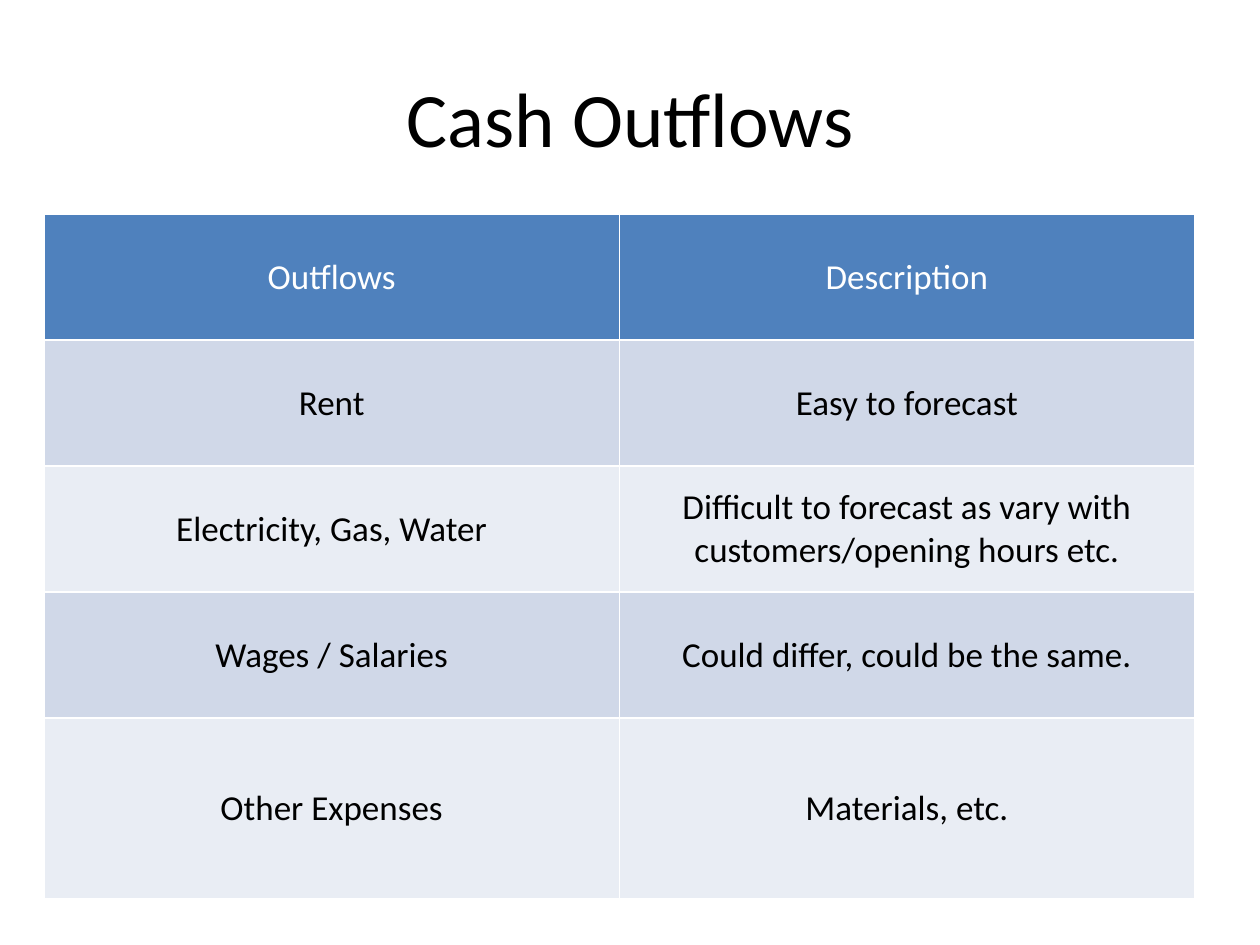
from lxml import etree
from pptx import Presentation
from pptx.dml.color import RGBColor
from pptx.enum.text import MSO_ANCHOR, PP_ALIGN
from pptx.oxml.ns import qn
from pptx.util import Inches, Pt

CENTER = PP_ALIGN.CENTER
MIDDLE = MSO_ANCHOR.MIDDLE
BLACK = RGBColor(0x00, 0x00, 0x00)
WHITE = RGBColor(0xFF, 0xFF, 0xFF)
HEADER_BLUE = RGBColor(0x4F, 0x81, 0xBD)
BANDS = (RGBColor(0xE9, 0xED, 0xF4), RGBColor(0xD0, 0xD8, 0xE8))
FONT = "Calibri"
TITLE_ONLY = 5

OUTFLOWS = (
    ("Outflows", "Description"),
    ("Rent", "Easy to forecast"),
    ("Electricity, Gas, Water",
     "Difficult to forecast as vary with customers/opening hours etc."),
    ("Wages / Salaries", "Could differ, could be the same."),
    ("Other Expenses", "Materials, etc."),
)
ROW_HEIGHTS = (1, 1, 1, 1, 1.43)


def format_text(text_frame, size, color):
    """Centre the text and set its font."""
    for paragraph in text_frame.paragraphs:
        paragraph.alignment = CENTER
        for run in paragraph.runs:
            run.font.name = FONT
            run.font.size = Pt(size)
            run.font.bold = False
            run.font.color.rgb = color


def add_borders(cell, color, width):
    """Draw a solid line on each side of a cell."""
    properties = cell._tc.get_or_add_tcPr()
    for side in ("a:lnL", "a:lnR", "a:lnT", "a:lnB"):
        line = etree.SubElement(properties, qn(side), w=str(Pt(width)))
        fill = etree.SubElement(line, qn("a:solidFill"))
        etree.SubElement(fill, qn("a:srgbClr"), val=str(color))


def place_title(slide, text, left, top, width, height):
    """Fill and place the title placeholder."""
    title = slide.shapes.title
    title.left, title.top = Inches(left), Inches(top)
    title.width, title.height = Inches(width), Inches(height)
    title.text_frame.text = text
    title.text_frame.vertical_anchor = MIDDLE
    format_text(title.text_frame, 44, BLACK)


def add_outflow_table(slide, left, top, width):
    """Add the banded table with equal columns across the given width."""
    columns = len(OUTFLOWS[0])
    table = slide.shapes.add_table(
        len(OUTFLOWS), columns, Inches(left), Inches(top),
        Inches(width), Inches(sum(ROW_HEIGHTS))).table
    for column in table.columns:
        column.width = Inches(width / columns)
    for row_index, values in enumerate(OUTFLOWS):
        table.rows[row_index].height = Inches(ROW_HEIGHTS[row_index])
        is_header = row_index == 0
        for column_index, value in enumerate(values):
            cell = table.cell(row_index, column_index)
            cell.text_frame.text = value
            cell.vertical_anchor = MIDDLE
            format_text(cell.text_frame, 20, WHITE if is_header else BLACK)
            add_borders(cell, WHITE, 1)
            cell.fill.solid()
            cell.fill.fore_color.rgb = HEADER_BLUE if is_header else BANDS[row_index % 2]


def main():
    """Build and save the slide."""
    presentation = Presentation()
    presentation.slide_width = Inches(10)
    presentation.slide_height = Inches(7.5)
    slide = presentation.slides.add_slide(presentation.slide_layouts[TITLE_ONLY])
    place_title(slide, "Cash Outflows", 0.5, 0.3, 9, 1.25)
    add_outflow_table(slide, 0.35, 1.7, 9.13)
    presentation.save("out.pptx")


if __name__ == "__main__":
    main()
